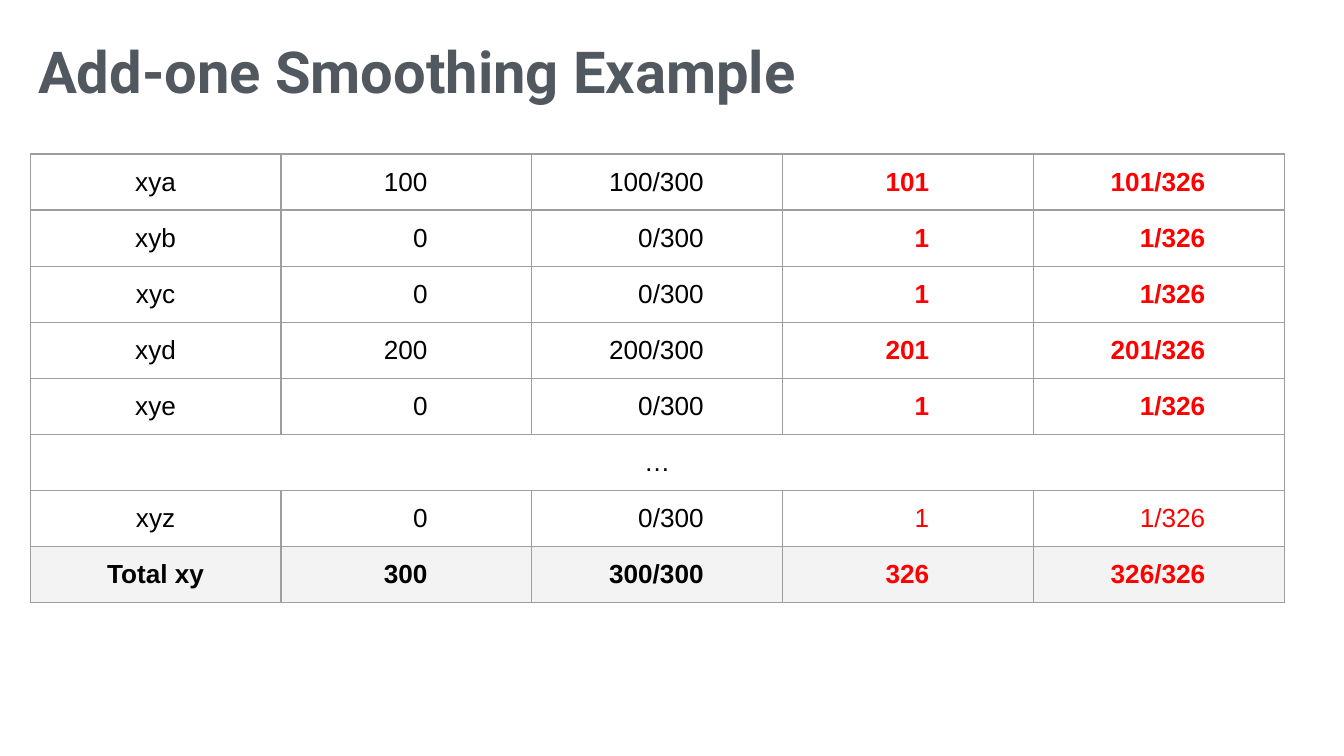
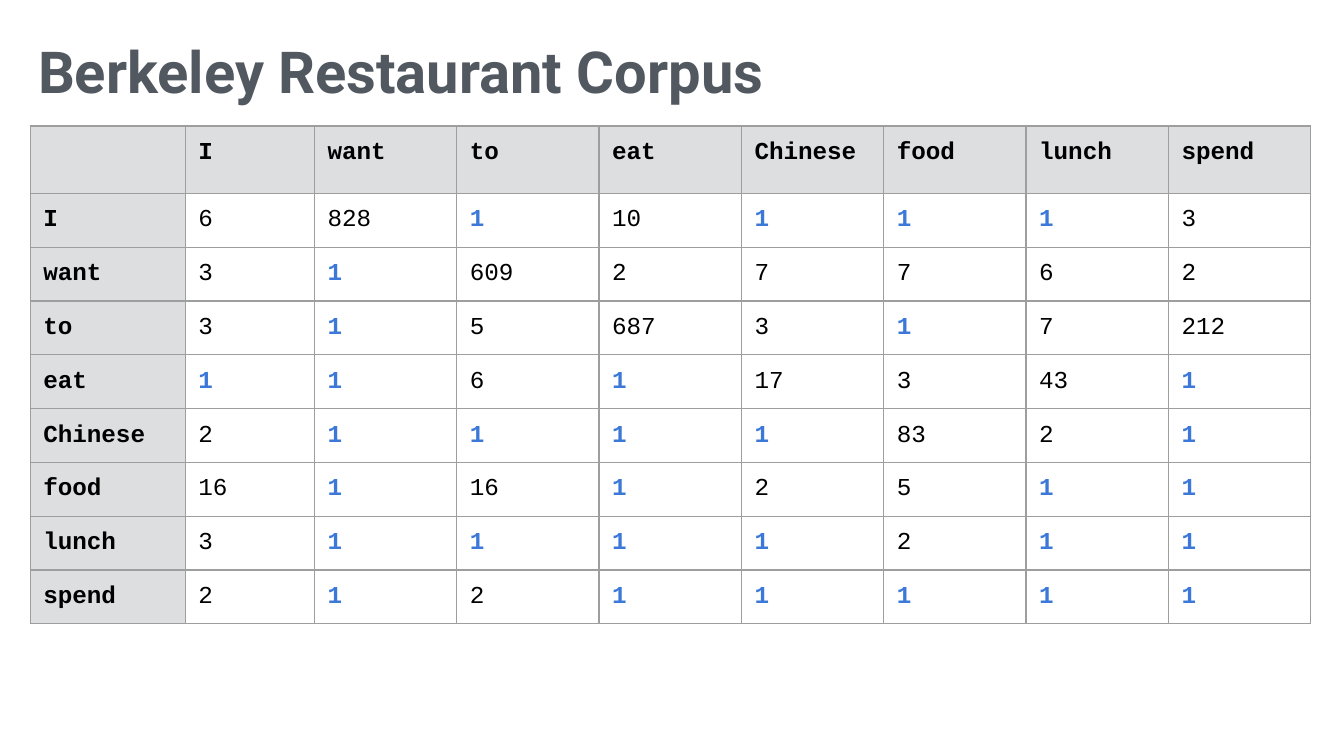
"""Build two slides of n-gram count tables with add-one smoothing."""
from dataclasses import dataclass
from typing import Any, Optional

from lxml import etree
from pptx import Presentation
from pptx import util as u
from pptx.dml.color import RGBColor
from pptx.enum import text
from pptx.oxml import ns

SLATE = RGBColor(0x52, 0x58, 0x60)
BLACK = RGBColor(0x00, 0x00, 0x00)
RED = RGBColor(0xFF, 0x00, 0x00)
BLUE = RGBColor(0x3C, 0x78, 0xD8)
BORDER = RGBColor(0x9E, 0x9E, 0x9E)
TOTAL_FILL = RGBColor(0xF3, 0xF3, 0xF3)
HEADER_FILL = RGBColor(0xDC, 0xDE, 0xE0)

TITLE_ONLY_LAYOUT = 5
LEFT = u.Cm(0.57)
CELL_MARGIN = u.Cm(0.25)
BORDER_WIDTH = u.Pt(0.75)

HISTORY_COUNTS = {"xya": 100, "xyb": 0, "xyc": 0, "xyd": 200, "xye": 0, "…": None, "xyz": 0}
COUNT_TOTAL = 300
SMOOTHED_TOTAL = COUNT_TOTAL + 26
COUNT_INSET = u.Cm(1.97)
FRACTION_INSET = u.Cm(1.49)

WORDS = ["I", "want", "to", "eat", "Chinese", "food", "lunch", "spend"]
BIGRAM_COUNTS = [
    [6, 828, 1, 10, 1, 1, 1, 3],
    [3, 1, 609, 2, 7, 7, 6, 2],
    [3, 1, 5, 687, 3, 1, 7, 212],
    [1, 1, 6, 1, 17, 3, 43, 1],
    [2, 1, 1, 1, 1, 83, 2, 1],
    [16, 1, 16, 1, 2, 5, 1, 1],
    [3, 1, 1, 1, 1, 2, 1, 1],
    [2, 1, 2, 1, 1, 1, 1, 1],
]


@dataclass(frozen=True)
class CellContent:
    """Words and look of one table cell."""
    words: str
    color: RGBColor = BLACK
    bold: bool = False
    fill: Optional[RGBColor] = None
    right_inset: Optional[u.Length] = None


@dataclass(frozen=True)
class TableStyle:
    """Placement and lettering shared by the cells of one table."""
    top: u.Length
    column_widths: list[u.Length]
    row_height: u.Length
    font_name: str
    font_size: u.Length
    alignment: text.PP_ALIGN
    anchor: text.MSO_ANCHOR


def apply_format(target: Any, values: dict[str, Any]) -> None:
    """Set each named attribute on the target."""
    for name, value in values.items():
        setattr(target, name, value)


def add_titled_slide(presentation: Any, title: str) -> Any:
    """Add a slide with the shared title style."""
    slide = presentation.slides.add_slide(presentation.slide_layouts[TITLE_ONLY_LAYOUT])
    shape = slide.shapes.title
    apply_format(shape, {"left": u.Cm(0.56), "top": u.Cm(0.51),
                         "width": u.Cm(24.21), "height": u.Cm(1.24)})
    margin = u.Cm(0.16)
    apply_format(shape.text_frame, {
        "text": title, "word_wrap": True, "auto_size": text.MSO_AUTO_SIZE.NONE,
        "vertical_anchor": text.MSO_ANCHOR.TOP, "margin_left": margin,
        "margin_right": margin, "margin_top": margin, "margin_bottom": margin})
    paragraph = shape.text_frame.paragraphs[0]
    paragraph.alignment = text.PP_ALIGN.LEFT
    font = paragraph.runs[0].font
    apply_format(font, {"name": "Roboto", "size": u.Pt(31), "bold": True})
    font.color.rgb = SLATE
    return slide


def add_borders(cell: Any) -> None:
    """Draw the shared thin line on all four sides of a cell."""
    properties = cell._tc.get_or_add_tcPr()
    for side in ("lnL", "lnR", "lnT", "lnB"):
        line = etree.SubElement(properties, ns.qn(f"a:{side}"), w=str(int(BORDER_WIDTH)))
        fill = etree.SubElement(line, ns.qn("a:solidFill"))
        etree.SubElement(fill, ns.qn("a:srgbClr"), val=str(BORDER))


def fill_cell(cell: Any, content: CellContent, style: TableStyle) -> None:
    """Write and format one cell."""
    add_borders(cell)
    apply_format(cell, {
        "vertical_anchor": style.anchor, "margin_left": CELL_MARGIN,
        "margin_right": content.right_inset or CELL_MARGIN,
        "margin_top": CELL_MARGIN, "margin_bottom": CELL_MARGIN})
    if content.fill is None:
        cell.fill.background()
    else:
        cell.fill.solid()
        cell.fill.fore_color.rgb = content.fill
    if not content.words:
        return
    paragraph = cell.text_frame.paragraphs[0]
    paragraph.alignment = text.PP_ALIGN.RIGHT if content.right_inset else style.alignment
    run = paragraph.add_run()
    run.text = content.words
    apply_format(run.font, {"name": style.font_name, "size": style.font_size,
                            "bold": content.bold})
    run.font.color.rgb = content.color


def add_table(slide: Any, rows: list[list[CellContent]], style: TableStyle) -> None:
    """Draw a table, merging any row that holds a single cell."""
    widths = style.column_widths
    table = slide.shapes.add_table(len(rows), len(widths), LEFT, style.top,
                                   sum(widths), style.row_height * len(rows)).table
    apply_format(table, {"first_row": False, "horz_banding": False})
    for column, width in zip(table.columns, widths):
        column.width = width
    for row_index, contents in enumerate(rows):
        table.rows[row_index].height = style.row_height
        padding = [CellContent("")] * (len(widths) - len(contents))
        for column_index, content in enumerate(contents + padding):
            fill_cell(table.cell(row_index, column_index), content, style)
        if padding:
            table.cell(row_index, 0).merge(table.cell(row_index, len(widths) - 1))


def smoothing_row(label: str, count: int, smoothed: int, bold: bool = False,
                  smoothed_bold: bool = True,
                  fill: Optional[RGBColor] = None) -> list[CellContent]:
    """Return the plain and smoothed estimates for one history."""
    return [
        CellContent(label, BLACK, bold, fill),
        CellContent(f"{count}", BLACK, bold, fill, COUNT_INSET),
        CellContent(f"{count}/{COUNT_TOTAL}", BLACK, bold, fill, FRACTION_INSET),
        CellContent(f"{smoothed}", RED, smoothed_bold, fill, COUNT_INSET),
        CellContent(f"{smoothed}/{SMOOTHED_TOTAL}", RED, smoothed_bold, fill, FRACTION_INSET),
    ]


def add_smoothing_slide(presentation: Any) -> None:
    """Add the worked example of add-one smoothing."""
    rows = [
        [CellContent(label)] if count is None
        else smoothing_row(label, count, count + 1, smoothed_bold=label != "xyz")
        for label, count in HISTORY_COUNTS.items()
    ]
    rows.append(smoothing_row("Total xy", COUNT_TOTAL, SMOOTHED_TOTAL, True, True, TOTAL_FILL))
    style = TableStyle(u.Cm(2.91), [u.Cm(4.74)] * 5, u.Cm(1.06), "Arial", u.Pt(14),
                       text.PP_ALIGN.CENTER, text.MSO_ANCHOR.MIDDLE)
    add_table(add_titled_slide(presentation, "Add-one Smoothing Example"), rows, style)


def add_corpus_slide(presentation: Any) -> None:
    """Add the smoothed bigram counts, with unseen pairs in blue."""
    rows = [[CellContent(word, bold=True, fill=HEADER_FILL) for word in ["", *WORDS]]]
    for word, counts in zip(WORDS, BIGRAM_COUNTS):
        rows.append([CellContent(word, bold=True, fill=HEADER_FILL)] + [
            CellContent(str(count), BLUE if count == 1 else BLACK, count == 1)
            for count in counts])
    widths = [u.Cm(2.93), u.Cm(2.44)] + [u.Cm(2.69)] * 7
    style = TableStyle(u.Cm(2.38), widths, u.Cm(0.94), "Courier New", u.Pt(13),
                       text.PP_ALIGN.LEFT, text.MSO_ANCHOR.TOP)
    add_table(add_titled_slide(presentation, "Berkeley Restaurant Corpus"), rows, style)


def main() -> None:
    """Build and save the presentation."""
    presentation = Presentation()
    apply_format(presentation, {"slide_width": u.Cm(25.4), "slide_height": u.Cm(14.29)})
    add_smoothing_slide(presentation)
    add_corpus_slide(presentation)
    presentation.save("out.pptx")


if __name__ == "__main__":
    main()
